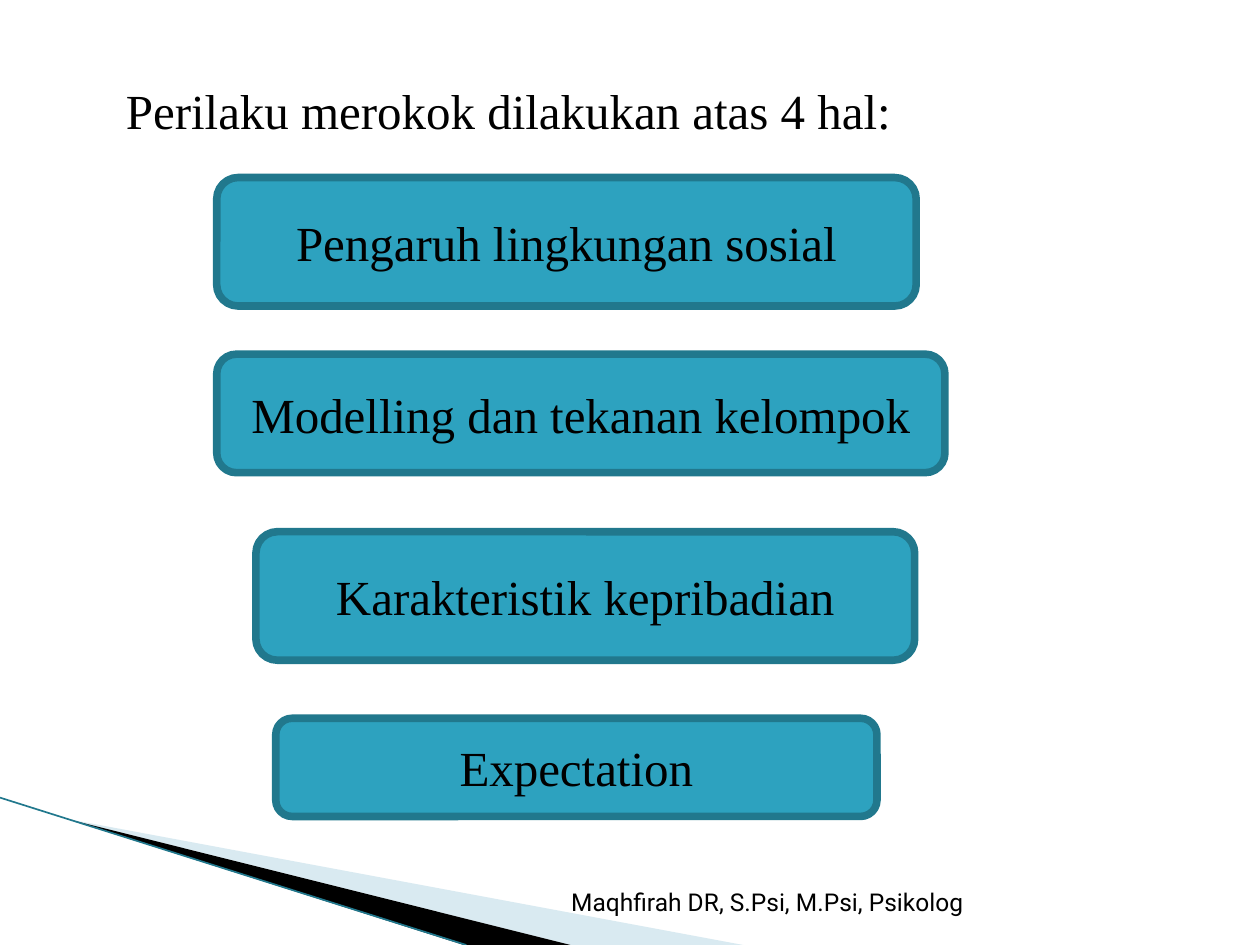
from dataclasses import dataclass

from lxml.etree import SubElement
from pptx import Presentation
from pptx.dml.color import RGBColor as RGB
from pptx.enum.shapes import MSO_CONNECTOR as LINK, MSO_SHAPE as SHAPE
from pptx.enum.text import MSO_ANCHOR as ANCHOR, PP_ALIGN as ALIGN
from pptx.oxml.ns import qn
from pptx.util import Cm, Pt


@dataclass(frozen=True)
class Theme:
    fill: RGB = RGB(0x2D, 0xA2, 0xBF)
    edge: RGB = RGB(0x21, 0x78, 0x8D)
    pale: RGB = RGB(0xA0, 0xCB, 0xDC)
    ink: RGB = RGB(0, 0, 0)
    serif: str = "Times New Roman"
    sans: str = "Roboto"
    body: float = 28
    foot: float = 14
    rim: float = 4.33
    hair: float = 0.95


THEME = Theme()

# Label, then left, top, width and height in cm
CAUSES = [
    ("Pengaruh lingkungan sosial", 4.37, 3.58, 14.1, 2.59),
    ("Modelling dan tekanan kelompok", 4.37, 7.14, 14.68, 2.39),
    ("Karakteristik kepribadian", 5.16, 10.72, 13.28, 2.59),
    ("Expectation", 5.56, 14.48, 12.12, 1.98),
]


def write(frame, text, size, font, align):
    frame.word_wrap = True
    para = frame.paragraphs[0]
    para.alignment = align
    run = para.add_run()
    run.text = text
    run.font.size = Pt(size)
    run.font.name = font
    run.font.color.rgb = THEME.ink


def add_text(slide, box, text, size, font, align):
    label = slide.shapes.add_textbox(*map(Cm, box))
    write(label.text_frame, text, size, font, align)


def add_cause(slide, text, *box):
    card = slide.shapes.add_shape(SHAPE.ROUNDED_RECTANGLE, *map(Cm, box))
    card.shadow.inherit = False
    card.fill.solid()
    card.fill.fore_color.rgb = THEME.fill
    card.line.color.rgb = THEME.edge
    card.line.width = Pt(THEME.rim)
    card.text_frame.vertical_anchor = ANCHOR.MIDDLE
    write(card.text_frame, text, THEME.body, THEME.serif, ALIGN.CENTER)


def add_wedge(slide, points, color, alpha=100):
    start, *rest = [(Cm(x), Cm(y)) for x, y in points]
    pen = slide.shapes.build_freeform(*start)
    pen.add_line_segments(rest, close=True)
    wedge = pen.convert_to_shape()
    wedge.shadow.inherit = False
    wedge.line.fill.background()
    wedge.fill.solid()
    wedge.fill.fore_color.rgb = color
    if alpha < 100:
        tone = wedge._element.spPr.find(qn("a:solidFill"))[0]
        SubElement(tone, qn("a:alpha"), val=str(alpha * 1000))


def add_line(slide, start, end):
    line = slide.shapes.add_connector(LINK.STRAIGHT, *map(Cm, start + end))
    line.line.color.rgb = THEME.edge
    line.line.width = Pt(THEME.hair)
    SubElement(line._element.spPr, qn("a:effectLst"))


def main():
    deck = Presentation()
    deck.slide_width, deck.slide_height = Cm(25.4), Cm(19.05)
    slide = deck.slides.add_slide(deck.slide_layouts[6])

    # Corner decoration
    tip = (1.35, 16.51)
    add_wedge(slide, [tip, (14.98, 19.05), (11.5, 19.05)], THEME.pale, 40)
    add_wedge(slide, [tip, (11.5, 19.05), (9.35, 19.05)], THEME.ink)
    add_line(slide, (0, 16.08), (9.4, 19.05))

    # Heading
    add_text(slide, (2.29, 1.5, 21.8, 1.4),
             "Perilaku merokok dilakukan atas 4 hal:",
             THEME.body, THEME.serif, ALIGN.LEFT)

    # Four causes
    for cause in CAUSES:
        add_cause(slide, *cause)

    # Author
    add_text(slide, (9.12, 17.75, 12.7, 0.86),
             "Maqhfirah DR, S.Psi, M.Psi, Psikolog",
             THEME.foot, THEME.sans, ALIGN.CENTER)

    deck.save("out.pptx")


if __name__ == "__main__":
    main()
